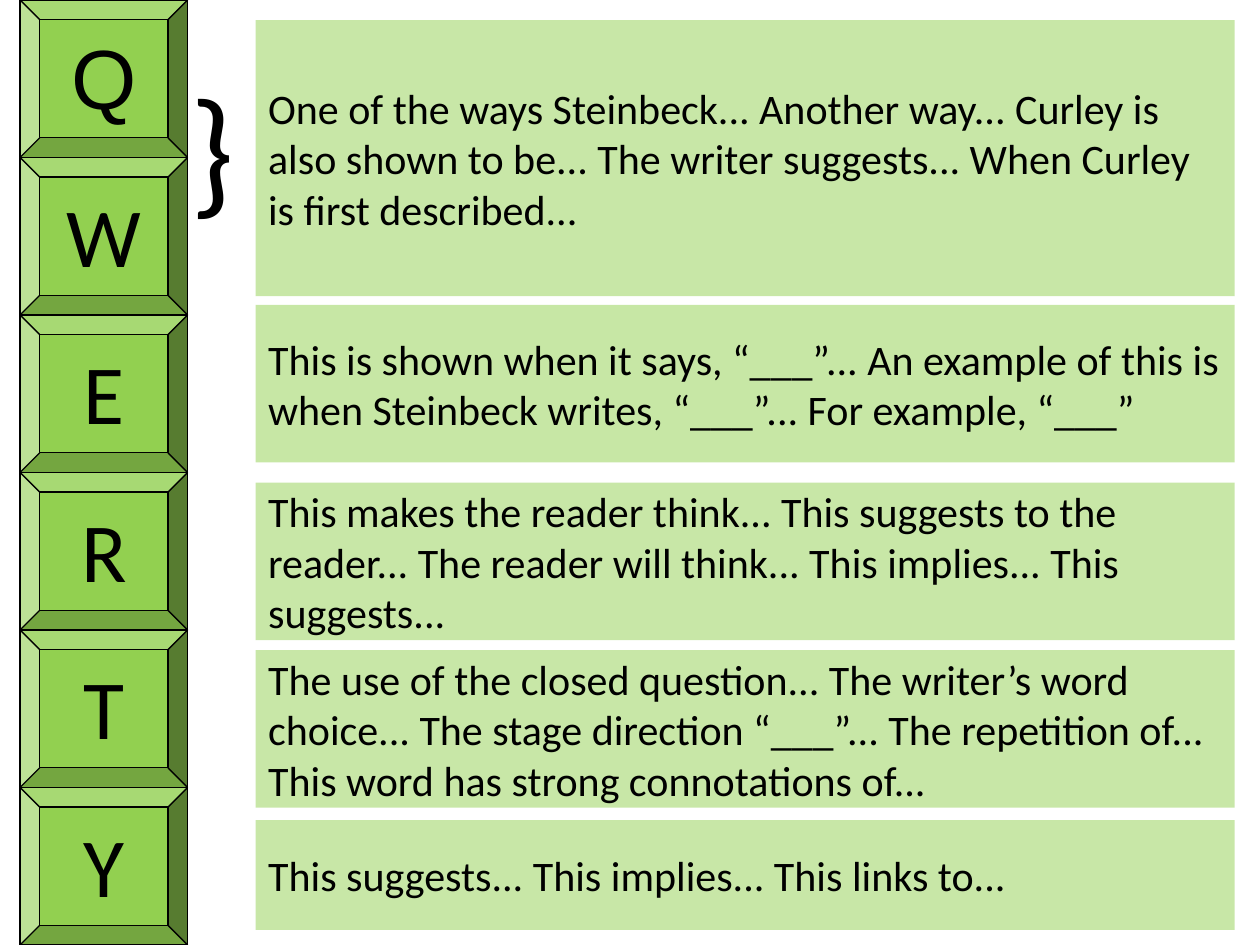
from typing import NamedTuple

from lxml.etree import SubElement
from pptx import Presentation
from pptx.dml.color import RGBColor
from pptx.enum.shapes import MSO_SHAPE as Shape
from pptx.enum.text import MSO_ANCHOR as Anchor, MSO_AUTO_SIZE as AutoSize, PP_ALIGN as Align
from pptx.oxml.ns import qn
from pptx.util import Emu, Pt

EMU_PER_PX = 9144
GREEN, BLACK = "92D050", "000000"
KEY_LEFT, KEY_WIDTH, KEY_HEIGHT = 16, 133, 125
PANEL_LEFT, PANEL_WIDTH = 203, 777


class Key(NamedTuple):
    letter: str
    font: str = "Calibri"


class Panel(NamedTuple):
    top: int
    height: int
    starters: str
    opacity: int = 50


KEYS = [Key("Q", "Arial"), *map(Key, "WERTY")]
PANELS = [
    Panel(16, 219, "One of the ways Steinbeck... Another way... Curley is also shown to be... "
                   "The writer suggests... When Curley is first described..."),
    Panel(242, 125, "This is shown when it says, “___”... An example of this is when Steinbeck "
                    "writes, “___”... For example, “___”", 51),
    Panel(383, 125, "This makes the reader think... This suggests to the reader... "
                    "The reader will think... This implies... This suggests..."),
    Panel(516, 125, "The use of the closed question... The writer’s word choice... "
                    "The stage direction “___”... The repetition of... "
                    "This word has strong connotations of..."),
    Panel(651, 87, "This suggests... This implies... This links to..."),
]


def px(length: int) -> Emu:
    """Turn slide pixels into EMU."""
    return Emu(length * EMU_PER_PX)


def color(code: str) -> RGBColor:
    """Turn a hex string into a colour."""
    return RGBColor.from_string(code)


def write(shape, text: str, *, size: int, font: str = "Calibri",
          align=Align.LEFT, anchor=Anchor.TOP) -> None:
    """Put formatted text in a shape."""
    frame = shape.text_frame
    frame.word_wrap = True
    frame.vertical_anchor = anchor
    paragraph = frame.paragraphs[0]
    paragraph.alignment = align
    run = paragraph.add_run()
    run.text = text
    run.font.size = Pt(size)
    run.font.name = font
    run.font.color.rgb = color(BLACK)


def add_block(slide, preset, left: int, top: int, width: int, height: int):
    """Add a green shape without a shadow."""
    block = slide.shapes.add_shape(preset, px(left), px(top), px(width), px(height))
    block.shadow.inherit = False
    block.fill.solid()
    block.fill.fore_color.rgb = color(GREEN)
    return block


def draw_key(slide, key: Key, row: int) -> None:
    """Draw one keyboard key in the left column."""
    block = add_block(slide, Shape.BEVEL, KEY_LEFT, row * KEY_HEIGHT, KEY_WIDTH, KEY_HEIGHT)
    block.line.color.rgb = color(BLACK)
    block.line.width = Pt(0.75)
    write(block, key.letter, size=48, font=key.font, align=Align.CENTER)


def draw_panel(slide, panel: Panel) -> None:
    """Draw one translucent panel of sentence starters."""
    block = add_block(slide, Shape.RECTANGLE, PANEL_LEFT, panel.top, PANEL_WIDTH, panel.height)
    block.line.fill.background()
    fill_color = block.fill._xPr.find(qn("a:solidFill"))[0]
    SubElement(fill_color, qn("a:alpha"), val=str(panel.opacity * 1000))
    write(block, panel.starters, size=24, anchor=Anchor.MIDDLE)


def draw_brace(slide) -> None:
    """Draw the brace that joins the first two keys."""
    brace = slide.shapes.add_textbox(px(141), px(43), px(55), px(145))
    write(brace, "}", size=80)
    brace.text_frame.auto_size = AutoSize.SHAPE_TO_FIT_TEXT


def main() -> None:
    """Build the slide and save it."""
    deck = Presentation()
    deck.slide_width, deck.slide_height = px(1000), px(750)
    slide = deck.slides.add_slide(deck.slide_layouts[6])
    for row, key in enumerate(KEYS):
        draw_key(slide, key, row)
    draw_brace(slide)
    for panel in PANELS:
        draw_panel(slide, panel)
    deck.save("out.pptx")


if __name__ == "__main__":
    main()
